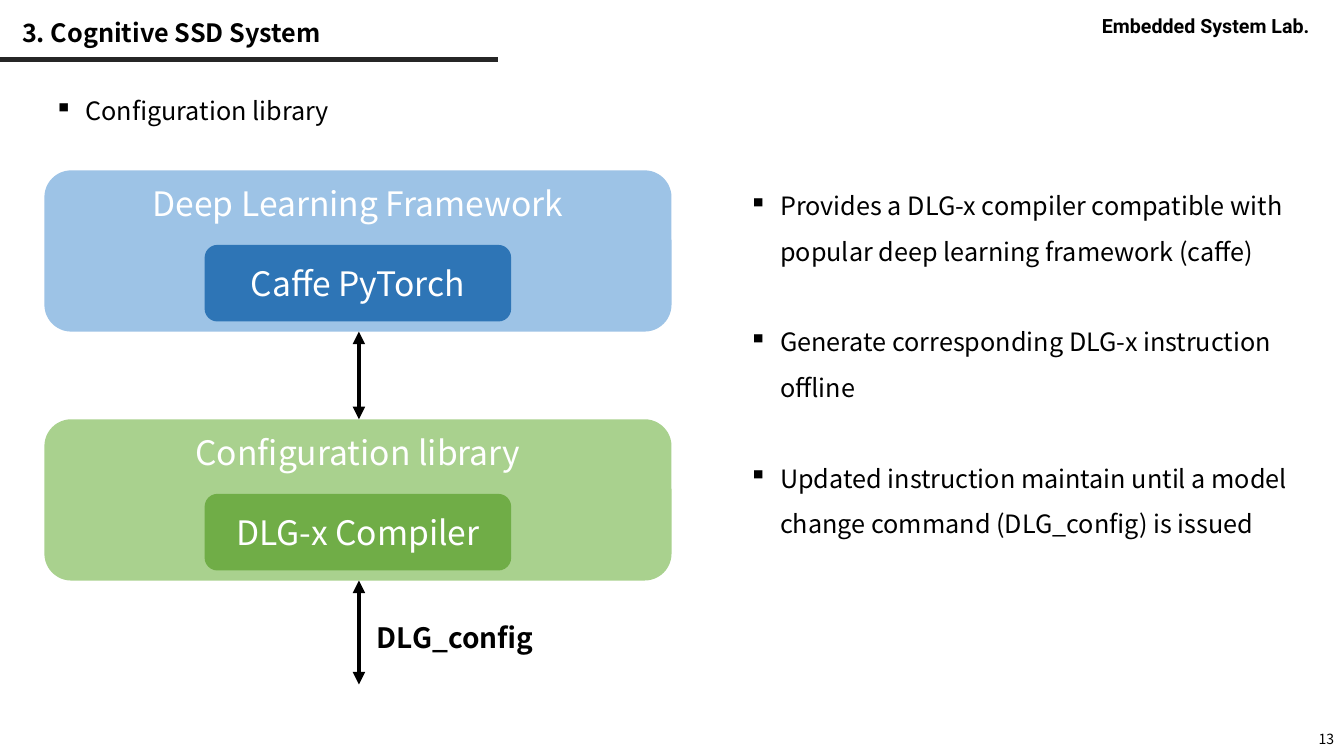
from lxml.etree import SubElement
from pptx import Presentation
from pptx.dml.color import RGBColor
from pptx.enum.shapes import MSO_CONNECTOR as Connector, MSO_SHAPE as Shape
from pptx.enum.text import MSO_ANCHOR as Anchor, PP_ALIGN as Align
from pptx.oxml.ns import qn
from pptx.util import Inches, Pt

BLACK = RGBColor(0x00, 0x00, 0x00)
WHITE = RGBColor(0xFF, 0xFF, 0xFF)
CHARCOAL = RGBColor(0x26, 0x26, 0x26)
LIGHT_BLUE = RGBColor(0x9D, 0xC3, 0xE6)
BLUE = RGBColor(0x2E, 0x75, 0xB6)
LIGHT_GREEN = RGBColor(0xA9, 0xD1, 0x8E)
GREEN = RGBColor(0x70, 0xAD, 0x47)
FONT = "Noto Sans CJK KR"
LAB_FONT = "Roboto"

FEATURES = [
    "Provides a DLG-x compiler compatible with popular deep learning framework (caffe)",
    "Generate corresponding DLG-x instruction offline",
    "Updated instruction maintain until a model change command (DLG_config) is issued",
]


def add_run(paragraph, text, size, color=BLACK, bold=False, font=FONT):
    """Append a formatted run to a paragraph."""
    run = paragraph.add_run()
    run.text = text
    run.font.name = font
    run.font.size = Pt(size)
    run.font.bold = bold
    run.font.color.rgb = color


def add_text_frame(slide, box, anchor=Anchor.TOP):
    """Add a wrapping text box and return its frame."""
    frame = slide.shapes.add_textbox(*map(Inches, box)).text_frame
    frame.word_wrap = True
    frame.vertical_anchor = anchor
    return frame


def add_label(slide, box, text, size, anchor=Anchor.TOP, align=Align.LEFT, **style):
    """Add a text box holding one line."""
    paragraph = add_text_frame(slide, box, anchor).paragraphs[0]
    paragraph.alignment = align
    add_run(paragraph, text, size, **style)


def add_bullets(slide, box, items, line_spacing=1.0, gap=0):
    """Add a bulleted list with a gap between its items."""
    frame = add_text_frame(slide, box)
    for index, item in enumerate(items):
        paragraph = frame.add_paragraph() if index else frame.paragraphs[0]
        properties = paragraph._p.get_or_add_pPr()
        properties.set("marL", str(Inches(0.31)))
        properties.set("indent", str(-Inches(0.31)))
        SubElement(properties, qn("a:buChar"), char="▪")
        paragraph.line_spacing = line_spacing
        if index:
            paragraph.space_before = Pt(gap)
        add_run(paragraph, item, 18)


def add_line(slide, start, end, color, arrows=False):
    """Draw a straight line, with arrowheads at both ends if wanted."""
    line = slide.shapes.add_connector(
        Connector.STRAIGHT, *map(Inches, (*start, *end)))
    line.line.color.rgb = color
    line.line.width = Pt(3)
    if arrows:
        outline = line.line._get_or_add_ln()
        for end_name in ("a:headEnd", "a:tailEnd"):
            SubElement(outline, qn(end_name), type="triangle")
    SubElement(line._element.spPr, qn("a:effectLst"))


def add_block(slide, box, text, fill, anchor):
    """Add a rounded block with white centred text."""
    shape = slide.shapes.add_shape(Shape.ROUNDED_RECTANGLE, *map(Inches, box))
    shape.shadow.inherit = False
    shape.fill.solid()
    shape.fill.fore_color.rgb = fill
    shape.line.fill.background()
    frame = shape.text_frame
    frame.word_wrap = True
    frame.vertical_anchor = anchor
    frame.paragraphs[0].alignment = Align.CENTER
    add_run(frame.paragraphs[0], text, 24, WHITE)


def add_layer(slide, box, title, component, outer_fill, inner_fill):
    """Add a layer block with its component block inside."""
    left, top, width, height = box
    inner_width = 3.04
    inner_box = (left + (width - inner_width) / 2, top + 0.74, inner_width, 0.76)
    add_block(slide, box, title, outer_fill, Anchor.TOP)
    add_block(slide, inner_box, component, inner_fill, Anchor.MIDDLE)


def add_stack(slide, box):
    """Add the two layers and the arrows that leave them downwards."""
    left, top, width, height = box
    layer_height = 1.6
    middle = left + width / 2 + 0.01
    library_top = top + 2.47
    add_layer(slide, (left, top, width, layer_height),
              "Deep Learning Framework", "Caffe PyTorch", LIGHT_BLUE, BLUE)
    add_layer(slide, (left, library_top, width, layer_height),
              "Configuration library", "DLG-x Compiler", LIGHT_GREEN, GREEN)
    for start, end in ((top + layer_height, library_top),
                       (library_top + layer_height, top + height)):
        add_line(slide, (middle, start), (middle, end), BLACK, arrows=True)
    add_label(slide, (middle, top + 4.42, 1.91, 0.44), "DLG_config", 20,
              align=Align.CENTER, bold=True)


def add_header(slide, box):
    """Add the title, its rule and the lab name."""
    left, top, width, height = box
    add_line(slide, (left, top + height), (left + 4.94, top + height), CHARCOAL)
    add_label(slide, (left + width - 2.5, top + 0.09, 2.49, 0.34),
              "Embedded System Lab.", 14, bold=True, font=LAB_FONT)
    add_label(slide, (left + 0.12, top + 0.12, 9.71, 0.4),
              "3. Cognitive SSD System", 18, Anchor.MIDDLE, bold=True)


def main():
    """Build the slide and save it."""
    presentation = Presentation()
    presentation.slide_width = Inches(13.33)
    presentation.slide_height = Inches(7.5)
    slide = presentation.slides.add_slide(presentation.slide_layouts[6])
    add_header(slide, (0, 0, 13.33, 0.59))
    add_bullets(slide, (0.44, 0.9, 12.05, 0.4), ["Configuration library"])
    add_stack(slide, (0.44, 1.69, 6.22, 5.1))
    add_bullets(slide, (7.33, 1.69, 5.56, 3.68), FEATURES, 1.5, 32.5)
    add_label(slide, (10.33, 7.17, 3, 0.32), "13", 10, Anchor.MIDDLE, Align.RIGHT)
    presentation.save("out.pptx")


if __name__ == "__main__":
    main()
